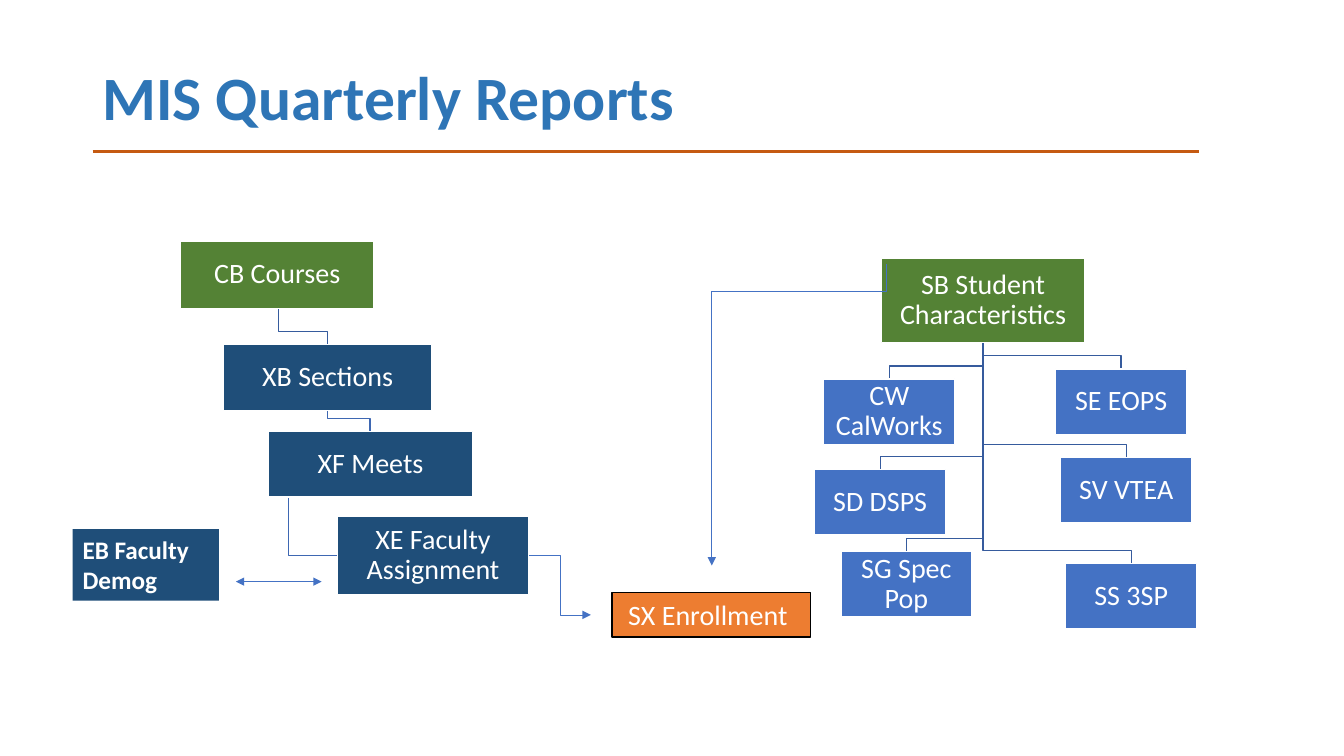
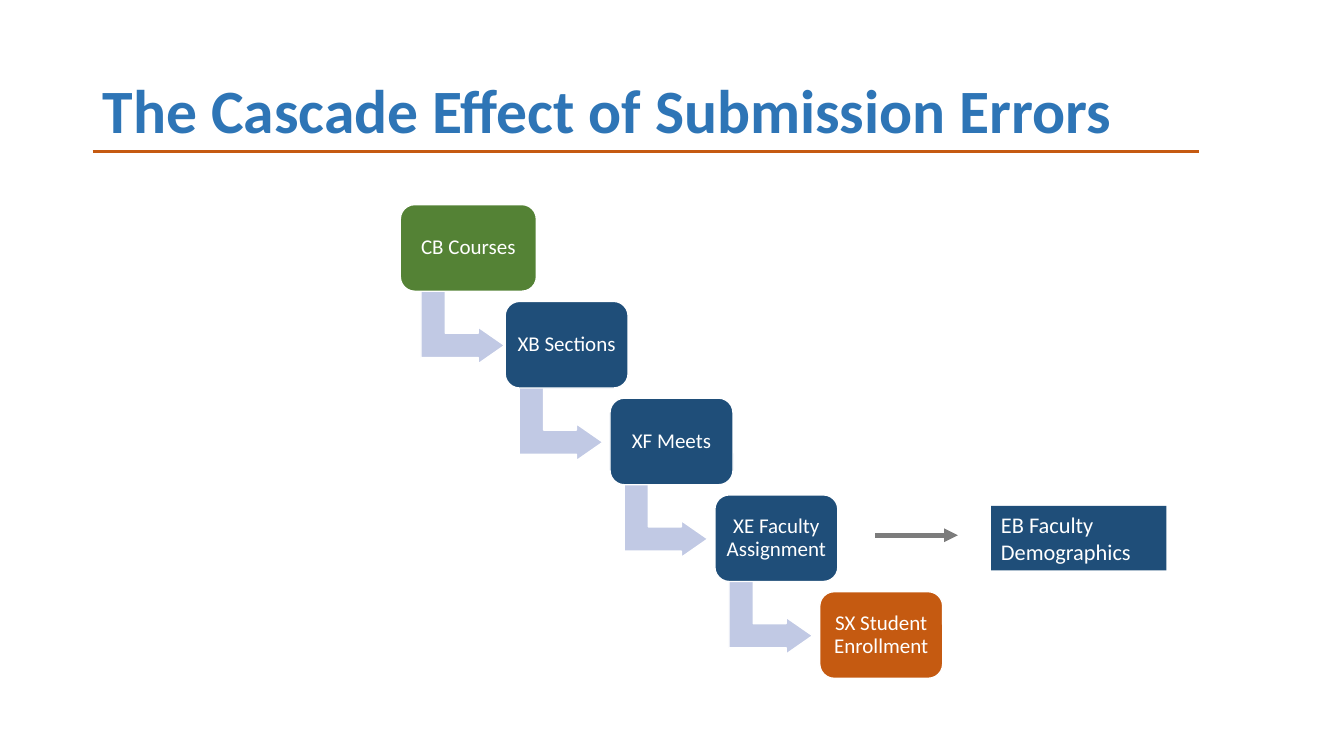
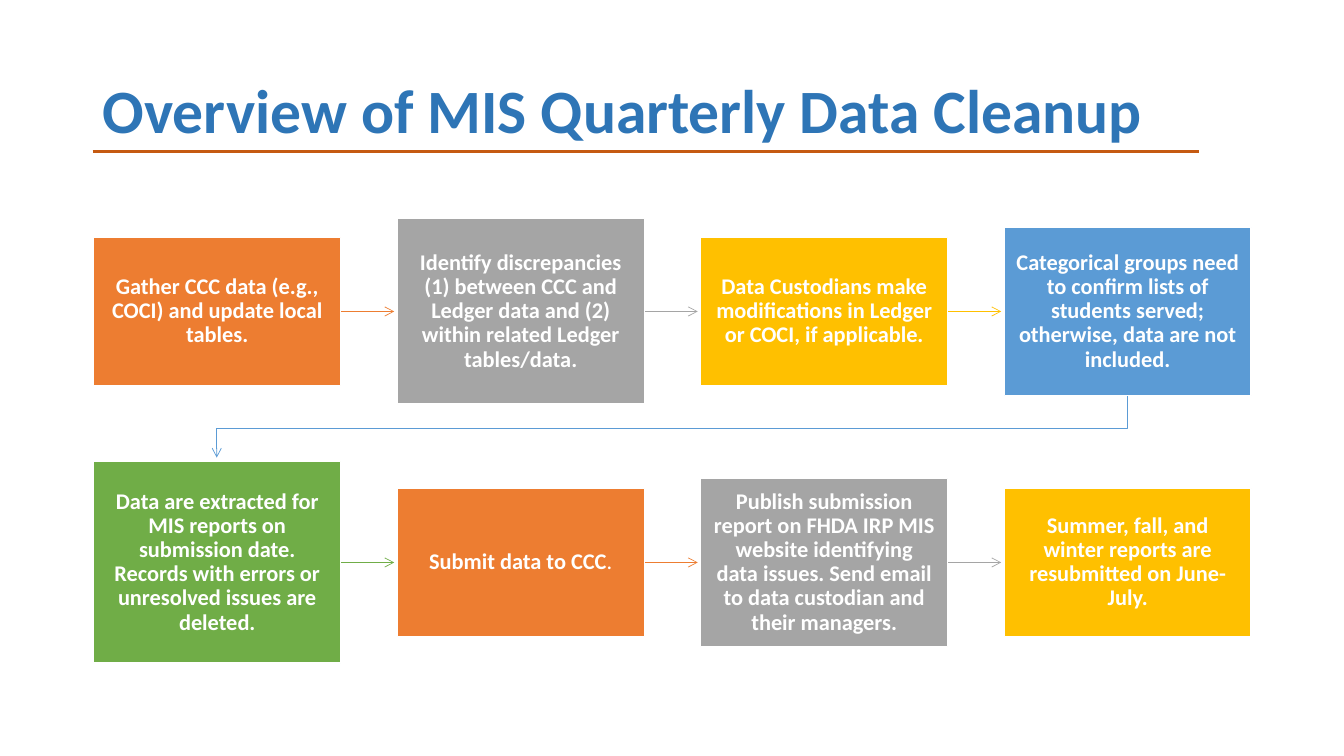
from lxml.etree import SubElement as Sub
from pptx import Presentation as Deck
from pptx.dml.color import RGBColor as Rgb
from pptx.enum.shapes import MSO_CONNECTOR as Link, MSO_SHAPE as Form
from pptx.enum.text import MSO_ANCHOR as Hold, PP_ALIGN as Side
from pptx.oxml.ns import qn
from pptx.util import Inches, Pt

FONT = "Calibri"
WHITE, BLACK = "FFFFFF", "000000"
TITLE, RUST = "2E75B6", "C55A11"
NAVY, GREEN, BLUE = "1F4E79", "548235", "4472C4"
STEM, LIMB, BEND = "365B9D", "3E67B2", "C1C9E4"
ORANGE, GREY, GOLD, SKY, LEAF = "ED7D31", "A5A5A5", "FFC000", "5B9BD5", "70AD47"


def tint(code):
    return Rgb.from_string(code)


class Pen:
    """Holds the shared style and draws on the current slide."""

    def __init__(self):
        self.deck = Deck()
        self.deck.slide_width = Inches(13.33)
        self.deck.slide_height = Inches(7.5)
        self.shapes = None

    def page(self, title, high=1.45, lead=0.9):
        self.shapes = self.deck.slides.add_slide(self.deck.slide_layouts[6]).shapes
        area = [Inches(v) for v in (0.92, 0.4, 11.5, high)]
        box = self.shapes.add_textbox(*area)
        self.label(box, title, 44, TITLE, True, Side.LEFT, Hold.MIDDLE, lead)
        self.line((0.92, 1.5), (11.89, 1.5), RUST, 2.25)

    def font(self, run, size, hue, bold):
        run.font.name = FONT
        run.font.size = Pt(size)
        run.font.bold = bold
        run.font.color.rgb = tint(hue)

    def label(self, shape, text, size, hue, bold, side, hold, lead, pad=None):
        frame = shape.text_frame
        frame.text = text
        frame.word_wrap = True
        frame.vertical_anchor = hold
        if pad is not None:
            frame.margin_left = frame.margin_right = Inches(pad)
            frame.margin_top = frame.margin_bottom = Inches(pad)
        para = frame.paragraphs[0]
        para.alignment = side
        para.line_spacing = lead
        self.font(para.runs[0], size, hue, bold)

    def form(self, kind, x, y, w, h, fill, edge=WHITE):
        shape = self.shapes.add_shape(kind, *[Inches(v) for v in (x, y, w, h)])
        shape.shadow.inherit = False
        shape.fill.solid()
        shape.fill.fore_color.rgb = tint(fill)
        if edge:
            shape.line.color.rgb = tint(edge)
            shape.line.width = Pt(1)
        else:
            shape.line.fill.background()
        return shape

    def box(self, text, x, y, w, h, fill, size=20, pad=0.01, bold=False,
            kind=Form.RECTANGLE):
        shape = self.form(kind, x, y, w, h, fill)
        self.label(shape, text, size, WHITE, bold, Side.CENTER, Hold.MIDDLE, 0.9, pad)
        return shape

    def note(self, text, x, y, w, h, fill, size, bold=False, edge=None):
        shape = self.form(Form.RECTANGLE, x, y, w, h, fill, edge)
        self.label(shape, text, size, WHITE, bold, Side.LEFT, Hold.TOP, 1)

    def ink(self, shape, hue, width, tail, head=None):
        shape.line.color.rgb = tint(hue)
        shape.line.width = Pt(width)
        pen = shape.line._get_or_add_ln()
        for tag, mark in (("a:headEnd", head), ("a:tailEnd", tail)):
            if mark:
                Sub(pen, qn(tag), type=mark)

    def line(self, start, end, hue, width, tail=None, head=None, kind=Link.STRAIGHT):
        ends = [Inches(v) for v in (*start, *end)]
        link = self.shapes.add_connector(kind, *ends)
        self.ink(link, hue, width, tail, head)
        Sub(link._element.spPr, qn("a:effectLst"))

    def route(self, spots, hue, width=1, tail=None):
        spots = [(Inches(x), Inches(y)) for x, y in spots]
        plan = self.shapes.build_freeform(*spots[0])
        plan.add_line_segments(spots[1:], close=False)
        shape = plan.convert_to_shape()
        shape.shadow.inherit = False
        shape.fill.background()
        self.ink(shape, hue, width, tail)

    def fork(self, x, y, end, top, hue):
        turn = top - 0.13
        self.route([(x, y), (x, turn), (end, turn), (end, top)], hue)


def reports(pen):
    pen.page("MIS Quarterly Reports", 1.1, 1)
    groups = [
        ("SS 3SP", 10.57, 5.59), ("SV VTEA", 10.52, 4.54), ("SG Spec Pop", 8.34, 5.47),
        ("SD DSPS", 8.08, 4.66), ("SE EOPS", 10.47, 3.66), ("CW CalWorks", 8.17, 3.76),
    ]
    for _, x, y in groups:
        pen.fork(9.75, 3.4, x + 0.65, y, STEM)
    pen.route([(2.86, 4.93), (2.86, 5.51), (3.35, 5.51)], LIMB)
    pen.fork(3.25, 4.08, 3.67, 4.28, LIMB)
    pen.fork(2.76, 3.05, 3.25, 3.42, STEM)
    for name, x, y, w, h, fill in (
        ("CB Courses", 1.79, 2.39, 1.92, 0.67, GREEN),
        ("XB Sections", 2.22, 3.42, 2.06, 0.65, NAVY),
        ("XF Meets", 2.66, 4.28, 2.03, 0.65, NAVY),
        ("XE Faculty Assignment", 3.35, 5.12, 1.89, 0.78, NAVY),
        ("SB Student Characteristics", 8.74, 2.56, 2.02, 0.84, GREEN),
    ):
        pen.box(name, x, y, w, h, fill)
    for name, x, y in groups:
        pen.box(name, x, y, 1.3, 0.65, BLUE)
    pen.note(" SX Enrollment", 6.07, 5.88, 1.97, 0.44, ORANGE, 20, edge=BLACK)
    pen.line((5.25, 5.51), (5.86, 6.1), BLUE, 0.5, "triangle", kind=Link.ELBOW)
    pen.route([(8.79, 2.62), (8.79, 2.89), (7.06, 2.89), (7.06, 5.61)],
              BLUE, 0.5, "triangle")
    pen.note("EB Faculty Demog", 0.72, 5.25, 1.45, 0.71, NAVY, 18, True)
    pen.line((2.34, 5.77), (3.19, 5.77), BLUE, 0.5, "triangle", "triangle")


def cascade(pen):
    pen.page("The Cascade Effect of Submission Errors")
    steps = [
        ("CB Courses", 1.35, GREEN), ("XB Sections", 1.22, NAVY),
        ("XF Meets", 1.22, NAVY), ("XE Faculty Assignment", 1.22, NAVY),
        ("SX Student Enrollment", 1.22, RUST),
    ]
    for i, (name, w, fill) in enumerate(steps):
        x, y = 3.97 + 1.04 * i, 2.03 + 0.96 * i
        if i < len(steps) - 1:
            bend = pen.form(Form.BENT_UP_ARROW, x + w / 2 - 0.42, y + 0.8,
                            0.73, 0.83, BEND)
            bend.rotation = 90
            for k, part in enumerate((0.33, 0.25, 0.36)):
                bend.adjustments[k] = part
        pen.box(name, x, y, w, 0.86, fill, 15, 0.06, kind=Form.ROUNDED_RECTANGLE)
    pen.note("EB Faculty Demographics", 9.83, 5.02, 1.74, 0.64, NAVY, 16)
    pen.line((8.68, 5.31), (9.5, 5.31), "7C7C7C", 3.25, "triangle")


def cleanup(pen):
    pen.page("Overview of MIS Quarterly Data Cleanup")
    rows = [
        (3.09, [
            ("Gather CCC data (e.g., COCI) and update local tables.", 1.47, ORANGE),
            ("Identify discrepancies (1) between CCC and Ledger data and (2) "
             "within related Ledger tables/data.", 1.84, GREY),
            ("Data Custodians make modifications in Ledger or COCI, "
             "if applicable.", 1.47, GOLD),
            ("Categorical groups need to confirm lists of students served; "
             "otherwise, data are not included.", 1.67, SKY),
        ]),
        (5.58, [
            ("Data are extracted for MIS reports on submission date. Records "
             "with errors or unresolved issues are deleted.", 2, LEAF),
            ("Submit data to CCC", 1.47, ORANGE),
            ("Publish submission report on FHDA IRP MIS website identifying data "
             "issues. Send email to data custodian and their managers.", 1.67, GREY),
            ("Summer, fall, and winter reports are resubmitted on June-July.",
             1.47, GOLD),
        ]),
    ]
    wide, step = 2.45, 3.01
    pen.route([(11.18, 3.93), (11.18, 4.25), (2.15, 4.25), (2.15, 4.54)],
              SKY, 0.5, "arrow")
    for mid, cells in rows:
        for i, (text, h, fill) in enumerate(cells):
            x = 0.93 + step * i
            if i < len(cells) - 1:
                pen.line((x + wide, mid), (x + wide + 0.53, mid), fill, 0.5, "arrow")
            shape = pen.box(text, x, mid - h / 2, wide, h, fill, 16, 0.12, True)
            if text.endswith("to CCC"):
                dot = shape.text_frame.paragraphs[0].add_run()
                dot.text = "."
                pen.font(dot, 16, WHITE, False)


def main():
    pen = Pen()
    for draw in (reports, cascade, cleanup):
        draw(pen)
    pen.deck.save("out.pptx")


if __name__ == "__main__":
    main()
